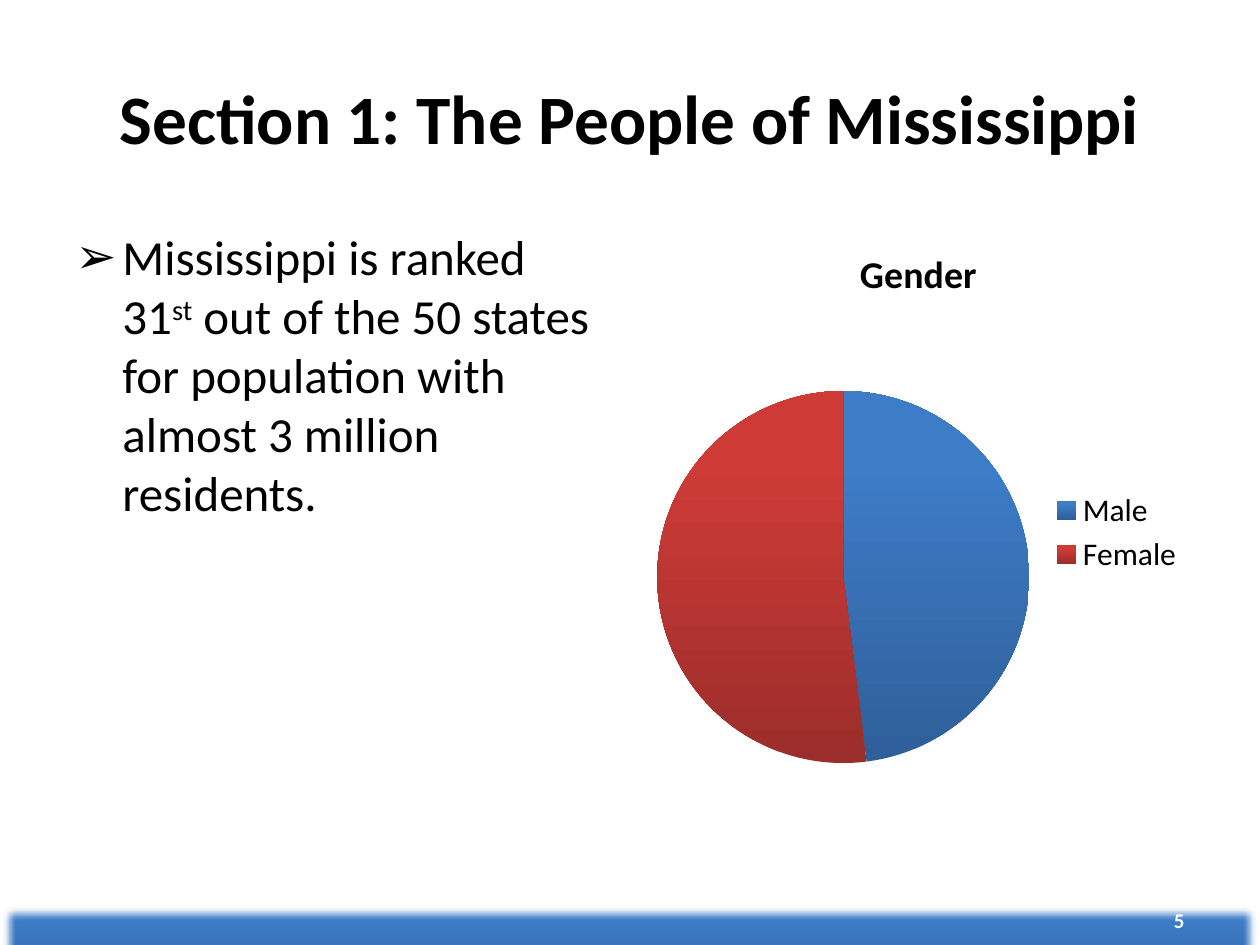
from lxml import etree
from pptx import Presentation
from pptx.chart.data import CategoryChartData
from pptx.dml.color import RGBColor
from pptx.enum.chart import XL_CHART_TYPE, XL_LEGEND_POSITION
from pptx.enum.shapes import MSO_SHAPE
from pptx.enum.text import MSO_ANCHOR, PP_ALIGN
from pptx.oxml.ns import qn
from pptx.util import Cm, Pt

FONT = "Calibri"
BLACK, WHITE = "000000", "FFFFFF"
BLUES = ("2F5F99", "3D7CC7")
REDS = ("9B2D2A", "CE3B37")
MARGIN = 1.27
COLUMN_WIDTH = 11.23
CONTENT_TOP, CONTENT_HEIGHT = 4.45, 12.57


def color(hex_string):
    return RGBColor.from_string(hex_string)


def style_font(font, size, hex_string=BLACK, bold=False):
    font.name = FONT
    font.size = Pt(size)
    font.bold = bold
    font.color.rgb = color(hex_string)


def fill_upward(fill, shades):
    """Blend from the dark shade at the bottom to the light one near the top."""
    fill.gradient()
    fill.gradient_angle = 90
    for stop, position, shade in zip(fill.gradient_stops, (0, 0.8), shades):
        stop.position = position
        stop.color.rgb = color(shade)


def add_text_frame(slide, box, anchor):
    frame = slide.shapes.add_textbox(*map(Cm, box)).text_frame
    frame.word_wrap = True
    frame.vertical_anchor = anchor
    return frame


def add_run(paragraph, text, size, hex_string=BLACK, bold=False):
    run = paragraph.add_run()
    run.text = text
    style_font(run.font, size, hex_string, bold)
    return run


def add_title(slide, box):
    paragraph = add_text_frame(slide, box, MSO_ANCHOR.MIDDLE).paragraphs[0]
    paragraph.alignment = PP_ALIGN.CENTER
    add_run(paragraph, "Section 1: The People of Mississippi", 39.6, bold=True)


def add_population_bullet(slide, box):
    frame = add_text_frame(slide, box, MSO_ANCHOR.TOP)
    frame.margin_right = Cm(0.4)
    paragraph = frame.paragraphs[0]
    properties = paragraph._p.get_or_add_pPr()
    indent = Cm(0.95)
    properties.set("marL", str(indent))
    properties.set("indent", str(-indent))
    etree.SubElement(properties, qn("a:buFont"), typeface="Arial")
    etree.SubElement(properties, qn("a:buChar"), char="➢")

    add_run(paragraph, "Mississippi is ranked 31", 28)
    ordinal = add_run(paragraph, "st", 28)
    ordinal.font._element.set("baseline", "30000")
    add_run(paragraph, " out of the 50 states for population with almost 3 million residents.", 28)


def add_gender_chart(slide, box):
    data = CategoryChartData()
    data.categories = ["Male", "Female"]
    data.add_series("Series 1", (48, 52))
    chart = slide.shapes.add_chart(XL_CHART_TYPE.PIE, *map(Cm, box), data).chart
    style_font(chart.font, 18)

    chart.has_title = True
    add_run(chart.chart_title.text_frame.paragraphs[0], "Gender", 21.6, bold=True)
    chart.has_legend = True
    chart.legend.position = XL_LEGEND_POSITION.RIGHT
    chart.legend.include_in_layout = False

    plot = chart.plots[0]
    plot.vary_by_categories = True
    for index, shades in enumerate((BLUES, REDS)):
        fill_upward(plot.series[0].points[index].format.fill, shades)


def add_footer(slide, box):
    """Place a soft-edged bar in the box, with the page number on it."""
    left, top, width, height = box
    bar = slide.shapes.add_shape(MSO_SHAPE.RECTANGLE, *map(Cm, box))
    bar.shadow.inherit = False
    bar.line.fill.background()
    fill_upward(bar.fill, BLUES)
    effects = bar._element.spPr.find(qn("a:effectLst"))
    etree.SubElement(effects, qn("a:softEdge"), rad=str(Pt(5)))

    number_width = 5.93
    number_box = (left + width - MARGIN - number_width, top - 0.18, number_width, 1.02)
    paragraph = add_text_frame(slide, number_box, MSO_ANCHOR.MIDDLE).paragraphs[0]
    paragraph.alignment = PP_ALIGN.RIGHT
    add_run(paragraph, "5", 12, WHITE, bold=True)


def main():
    presentation = Presentation()
    presentation.slide_width, presentation.slide_height = Cm(25.4), Cm(19.05)
    slide = presentation.slides.add_slide(presentation.slide_layouts[6])
    slide.background.fill.solid()
    slide.background.fill.fore_color.rgb = color(WHITE)

    chart_left = 25.4 - MARGIN - COLUMN_WIDTH
    add_footer(slide, (0, 18.21, 25.4, 1.91))
    add_population_bullet(slide, (MARGIN, CONTENT_TOP, COLUMN_WIDTH, CONTENT_HEIGHT))
    add_title(slide, (MARGIN, 0.76, 25.4 - 2 * MARGIN, 3.18))
    add_gender_chart(slide, (chart_left, CONTENT_TOP, COLUMN_WIDTH, CONTENT_HEIGHT))
    presentation.save("out.pptx")


if __name__ == "__main__":
    main()
